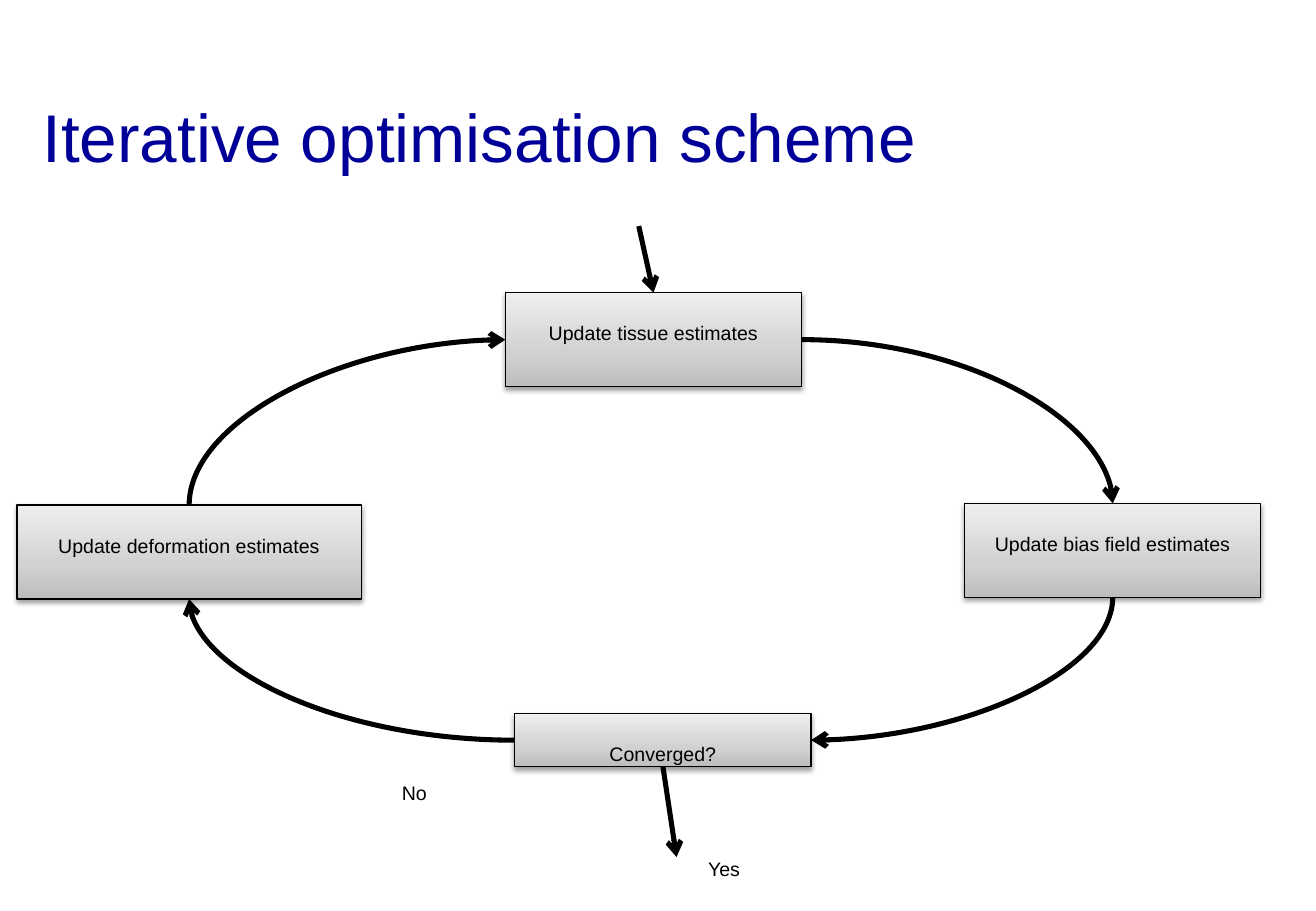
from copy import deepcopy

from pptx import Presentation
from pptx import util as u
from pptx.dml import color
from pptx.enum import shapes, text
from pptx.oxml import ns, parse_xml

Pt = u.Pt
NAVY = color.RGBColor(0x00, 0x00, 0x99)
BLACK = color.RGBColor(0x00, 0x00, 0x00)
GRADIENT = [
    (0, color.RGBColor(0xBD, 0xBD, 0xBD)),
    (0.35, color.RGBColor(0xD1, 0xD1, 0xD1)),
    (1, color.RGBColor(0xEE, 0xEE, 0xEE)),
]
TITLE_FONT = {"name": "Arial", "size": Pt(40), "bold": False}
LABEL_FONT = {"name": "Arial", "size": Pt(20), "bold": False}

# Connection sites of a rectangle
TOP, LEFT, BOTTOM, RIGHT = range(4)

SHADOW = (
    '<a:effectLst %s><a:outerShdw blurRad="%d" dist="%d" dir="5400000" rotWithShape="0">'
    '<a:srgbClr val="000000"><a:alpha val="38000"/></a:srgbClr>'
    "</a:outerShdw></a:effectLst>" % (ns.nsdecls("a"), Pt(3.1), Pt(1.6))
)
NO_EFFECTS = "<a:effectLst %s/>" % ns.nsdecls("a")
ARROWHEAD = '<a:tailEnd %s type="arrow"/>' % ns.nsdecls("a")


def apply_format(target, values):
    for name, value in values.items():
        setattr(target, name, value)


def place(shape, left, top, width, height):
    apply_format(shape, {"left": Pt(left), "top": Pt(top),
                         "width": Pt(width), "height": Pt(height)})


def write_label(shape, wording, alignment, wrap):
    """Write one line of lowered, subscript-style text."""
    frame = shape.text_frame
    apply_format(frame, {"word_wrap": wrap, "vertical_anchor": text.MSO_ANCHOR.TOP})
    paragraph = frame.paragraphs[0]
    paragraph.alignment = alignment
    run = paragraph.add_run()
    run.text = wording
    apply_format(run.font, LABEL_FONT)
    run.font.color.rgb = BLACK
    run.font._element.set("baseline", "-25000")


def set_title(slide, wording):
    title = slide.shapes.title
    place(title, 18, 18, 744, 90)
    title.text_frame.text = wording
    title.text_frame.vertical_anchor = text.MSO_ANCHOR.BOTTOM
    paragraph = title.text_frame.paragraphs[0]
    paragraph.alignment = text.PP_ALIGN.LEFT
    font = paragraph.runs[0].font
    apply_format(font, TITLE_FONT)
    font.color.rgb = NAVY


def add_step(slide, wording, left, top, width, height):
    shape = slide.shapes.add_shape(shapes.MSO_SHAPE.RECTANGLE,
                                   Pt(left), Pt(top), Pt(width), Pt(height))
    # Three-stop gradient, dark at the bottom
    shape.fill.gradient()
    shape.fill.gradient_angle = 90
    stop_list = shape._element.spPr.find(".//" + ns.qn("a:gsLst"))
    stop_list.insert(1, deepcopy(stop_list[0]))
    for stop, (position, shade) in zip(shape.fill.gradient_stops, GRADIENT):
        stop.position = position
        stop.color.rgb = shade
    shape.line.color.rgb = BLACK
    shape.line.width = Pt(0.75)
    shape._element.spPr.append(parse_xml(SHADOW))
    write_label(shape, wording, text.PP_ALIGN.CENTER, True)
    return shape


def add_answer(slide, wording, left, top, width):
    box = slide.shapes.add_textbox(Pt(left), Pt(top), Pt(width), Pt(31.5))
    write_label(box, wording, text.PP_ALIGN.LEFT, False)


def add_arrow(slide, kind, start, end):
    connector = slide.shapes.add_connector(kind, *start, *end)
    connector.line.color.rgb = BLACK
    connector.line.width = Pt(3)
    connector.line._get_or_add_ln().append(parse_xml(ARROWHEAD))
    connector._element.spPr.append(parse_xml(NO_EFFECTS))
    return connector


def site_point(shape, site):
    middle_x = shape.left + shape.width // 2
    middle_y = shape.top + shape.height // 2
    return {
        TOP: (middle_x, shape.top),
        LEFT: (shape.left, middle_y),
        BOTTOM: (middle_x, shape.top + shape.height),
        RIGHT: (shape.left + shape.width, middle_y),
    }[site]


def add_clockwise_arc(slide, source, source_site, target, target_site):
    """Join two steps by a quarter curve that leaves straight out of its site."""
    start = site_point(source, source_site)
    end = site_point(target, target_site)
    arc = add_arrow(slide, shapes.MSO_CONNECTOR.CURVE, start, end)
    arc.begin_connect(source, source_site)
    arc.end_connect(target, target_site)

    # A turned curve keeps its centre, with width and height swapped
    quarter_turns = [RIGHT, BOTTOM, LEFT, TOP].index(source_site)
    width, height = abs(end[0] - start[0]), abs(end[1] - start[1])
    if quarter_turns % 2:
        width, height = height, width
    apply_format(arc, {"left": (start[0] + end[0] - width) // 2,
                       "top": (start[1] + end[1] - height) // 2,
                       "width": width, "height": height})
    properties = arc._element.spPr
    properties.find(ns.qn("a:prstGeom")).set("prst", "curvedConnector2")
    frame = properties.find(ns.qn("a:xfrm"))
    for flip in ("flipH", "flipV"):
        frame.attrib.pop(flip, None)
    frame.set("rot", str(quarter_turns * 5400000))


def main():
    presentation = Presentation()
    presentation.slide_width, presentation.slide_height = Pt(780), Pt(540)
    slide = presentation.slides.add_slide(presentation.slide_layouts[5])
    set_title(slide, "Iterative optimisation scheme")

    # Steps of the loop
    tissue = add_step(slide, "Update tissue estimates", 299.5, 173.5, 175.7, 55.7)
    bias = add_step(slide, "Update bias field estimates", 571.7, 298.4, 175.7, 55.7)
    deformation = add_step(slide, "Update deformation estimates", 10.1, 299.4, 204, 55.7)
    converged = add_step(slide, "Converged?", 305.1, 423, 175.7, 31.5)

    # Clockwise loop
    add_clockwise_arc(slide, tissue, RIGHT, bias, TOP)
    add_clockwise_arc(slide, bias, BOTTOM, converged, RIGHT)
    add_clockwise_arc(slide, converged, LEFT, deformation, BOTTOM)
    add_clockwise_arc(slide, deformation, TOP, tissue, LEFT)

    # Way out and way in
    straight = shapes.MSO_CONNECTOR.STRAIGHT
    add_arrow(slide, straight, site_point(converged, BOTTOM), (Pt(401), Pt(508)))
    add_arrow(slide, straight, (Pt(378.6), Pt(134)), site_point(tissue, TOP))

    # Answers to the convergence test
    add_answer(slide, "Yes", 412.6, 491, 47.5)
    add_answer(slide, "No", 231.1, 445.7, 40.3)

    presentation.save("out.pptx")


if __name__ == "__main__":
    main()
